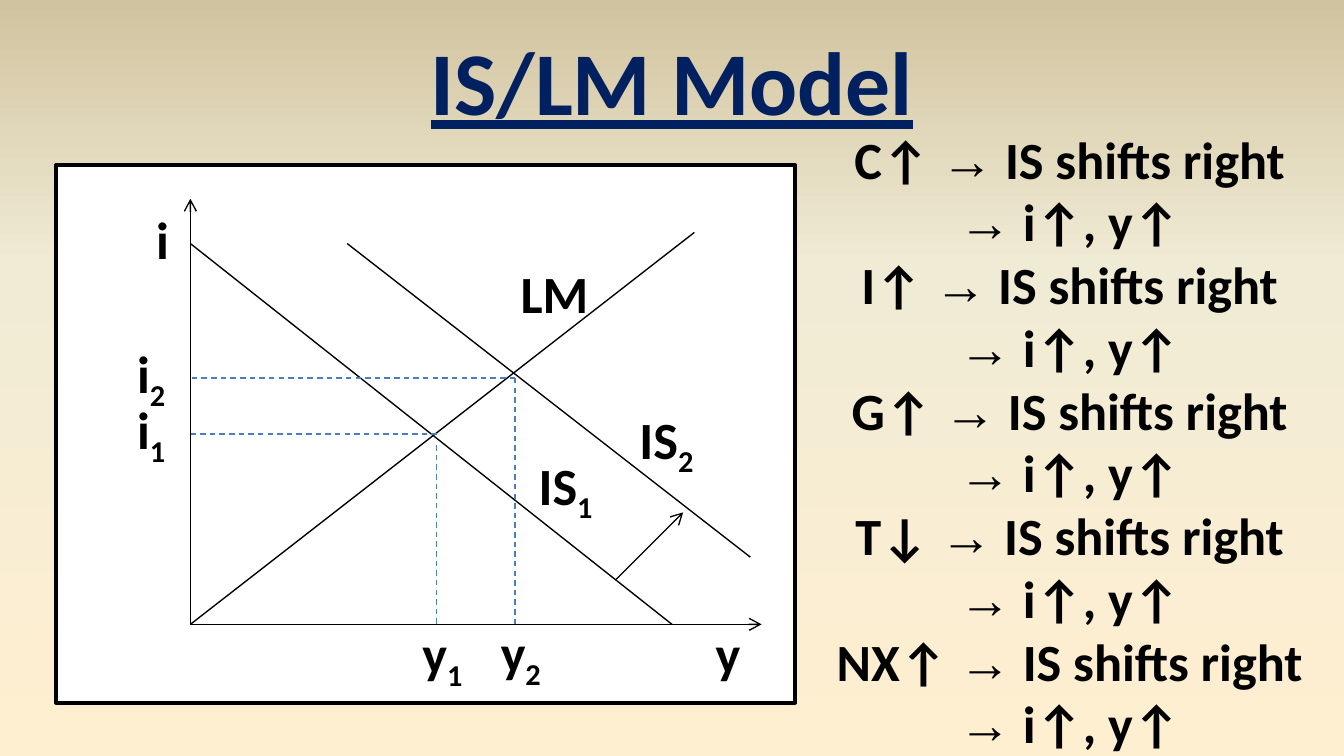
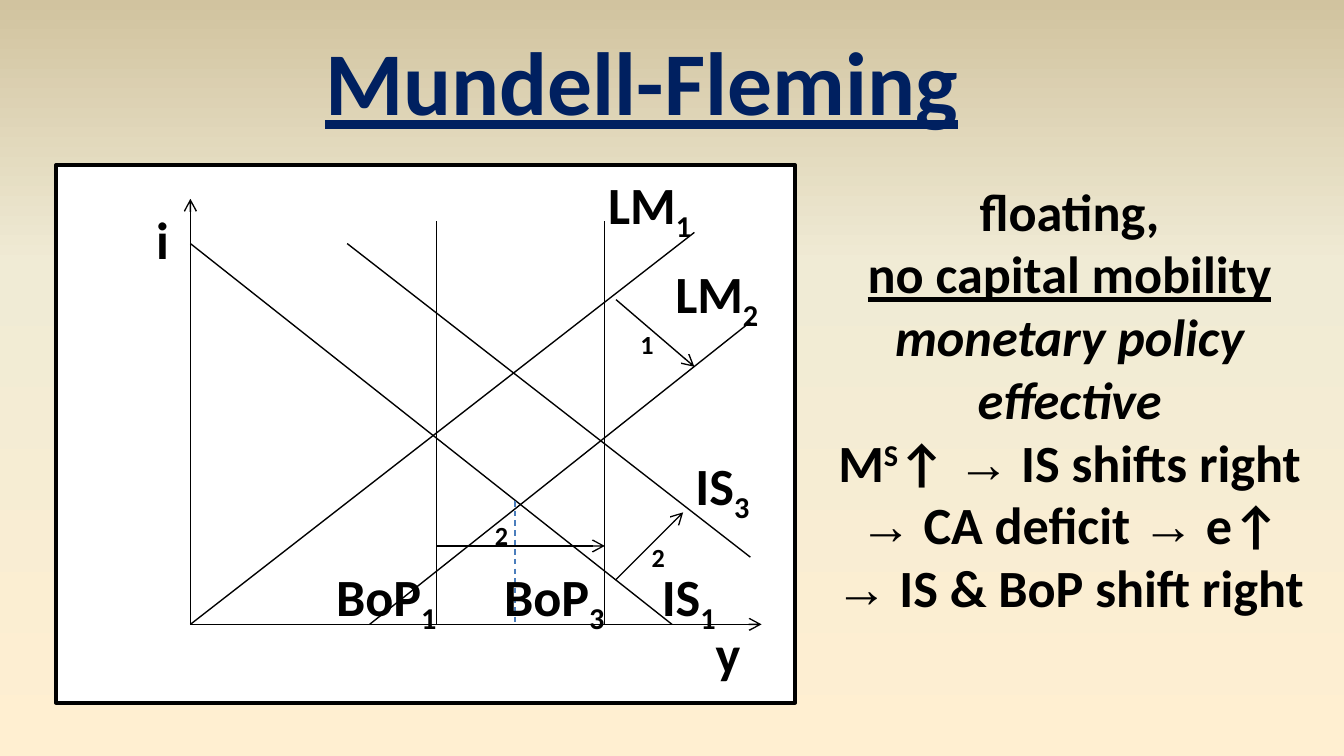
from copy import deepcopy
from dataclasses import dataclass
from itertools import groupby

from pptx import Presentation
from pptx.dml.color import RGBColor
from pptx.enum.dml import MSO_LINE
from pptx.enum.shapes import MSO_CONNECTOR, MSO_SHAPE
from pptx.enum.text import MSO_AUTO_SIZE, PP_ALIGN
from pptx.oxml.ns import qn
from pptx.oxml.xmlchemy import OxmlElement
from pptx.util import Emu, Pt

EMU_PER_PX = 9525
BLANK_LAYOUT = 6


def px(value):
    return Emu(value * EMU_PER_PX)


@dataclass(frozen=True)
class Theme:
    title_color: str = "002060"
    ink: str = "000000"
    paper: str = "FFFFFF"
    guide: str = "4B7EBC"
    background: tuple = ((0, "FFEFD1"), (0.65, "F0EBD5"), (1, "D1C39F"))
    font: str = "Calibri"
    arrow_font: str = "Times New Roman"
    title_size: int = 48
    text_size: int = 28
    step_size: int = 14
    border_width: float = 2
    line_width: float = 0.75


@dataclass(frozen=True)
class Span:
    text: str
    baseline: int = 0
    italic: bool = False
    underline: bool = False


class Deck:
    def __init__(self, theme):
        self.theme = theme
        self.presentation = Presentation()
        self.presentation.slide_width = px(960)
        self.presentation.slide_height = px(540)
        self.slide = None
        self.shapes = None

    def add_slide(self):
        layout = self.presentation.slide_layouts[BLANK_LAYOUT]
        self.slide = self.presentation.slides.add_slide(layout)
        self.shapes = self.slide.shapes
        fill = self.slide.background.fill
        fill.gradient()
        fill.gradient_angle = 90
        stop_list = self.slide.element.find(".//" + qn("a:gsLst"))
        stop_list.append(deepcopy(stop_list[0]))
        for stop, (position, color) in zip(fill.gradient_stops, self.theme.background):
            stop.position = position
            stop.color.rgb = RGBColor.from_string(color)

    def text(self, left, top, width, height, paragraphs, size=None, color=None, wrap=True):
        box = self.shapes.add_textbox(px(left), px(top), px(width), px(height))
        frame = box.text_frame
        frame.word_wrap = wrap
        frame.auto_size = MSO_AUTO_SIZE.SHAPE_TO_FIT_TEXT
        for index, spans in enumerate(paragraphs):
            paragraph = frame.add_paragraph() if index else frame.paragraphs[0]
            paragraph.alignment = PP_ALIGN.CENTER
            for span in spans:
                self.span(paragraph, span, size or self.theme.text_size, color or self.theme.ink)

    def span(self, paragraph, span, size, color):
        for is_arrow, characters in groupby(span.text, lambda character: character == "→"):
            run = paragraph.add_run()
            run.text = "".join(characters)
            font = run.font
            font.name = self.theme.arrow_font if is_arrow else self.theme.font
            font.size = Pt(size)
            font.bold = True
            font.italic = span.italic
            font.underline = span.underline
            font.color.rgb = RGBColor.from_string(color)
            if span.baseline:
                run.font._element.set("baseline", str(span.baseline * 1000))

    def title(self, left, width, text):
        self.text(left, 14, width, 87, [[Span(text, underline=True)]],
                  self.theme.title_size, self.theme.title_color, wrap=False)

    def side_text(self, top, height, paragraphs):
        self.text(568, top, 392, height, paragraphs)

    def label(self, left, top, width, text, subscript=""):
        spans = [Span(text)]
        if subscript:
            spans.append(Span(subscript, baseline=-25))
        self.text(left, top, width, 55, [spans])

    def step(self, left, top, number):
        self.text(left, top, 24, 33, [[Span(number)]], self.theme.step_size)

    def line(self, start, end, arrow=False, guide=False):
        connector = self.shapes.add_connector(
            MSO_CONNECTOR.STRAIGHT, *(px(value) for value in (*start, *end)))
        connector.line.width = Pt(self.theme.line_width)
        color = self.theme.guide if guide else self.theme.ink
        connector.line.color.rgb = RGBColor.from_string(color)
        if guide:
            connector.line.dash_style = MSO_LINE.DASH
        if arrow:
            tail = OxmlElement("a:tailEnd")
            tail.set("type", "arrow")
            connector.line._get_or_add_ln().append(tail)
        connector._element.spPr.append(OxmlElement("a:effectLst"))

    def diagram(self):
        self.shapes = self.slide.shapes.add_group_shape().shapes
        panel = self.shapes.add_shape(MSO_SHAPE.RECTANGLE, px(40), px(118), px(528), px(384))
        panel.shadow.inherit = False
        panel.fill.solid()
        panel.fill.fore_color.rgb = RGBColor.from_string(self.theme.paper)
        panel.line.color.rgb = RGBColor.from_string(self.theme.ink)
        panel.line.width = Pt(self.theme.border_width)
        origin = (136, 446)
        self.line((496, 166), origin)
        self.line((136, 174), (480, 446))
        self.line((248, 174), (536, 398))
        self.line(origin, (136, 142), arrow=True)
        self.line(origin, (544, 446), arrow=True)
        self.line((440, 414), (488, 366), arrow=True)
        self.label(80, 143, 72, "i")
        self.label(488, 439, 64, "y")


def add_is_lm(deck):
    deck.add_slide()
    deck.title(296, 368, "IS/LM Model")
    paragraphs = []
    for cause in ("C↑", "I↑", "G↑", "T↓", "NX↑"):
        paragraphs += [[Span(f"{cause} → IS shifts right")], [Span("→ i↑, y↑")]]
    deck.side_text(86, 462, paragraphs)

    deck.diagram()
    for start, end in (
        ((368, 270), (136, 270)),
        ((312, 310), (136, 310)),
        ((312, 318), (312, 446)),
        ((368, 270), (368, 446)),
    ):
        deck.line(start, end, guide=True)
    for label in (
        (368, 319, 72, "IS", "1"),
        (360, 182, 72, "LM"),
        (440, 286, 72, "IS", "2"),
        (80, 239, 56, "i", "2"),
        (80, 279, 56, "i", "1"),
        (288, 439, 56, "y", "1"),
        (344, 438, 56, "y", "2"),
    ):
        deck.label(*label)


def add_mundell_fleming(deck):
    deck.add_slide()
    deck.title(221, 475, "Mundell-Fleming")
    deck.side_text(123, 326, [
        [Span("floating,")],
        [Span("no capital mobility", underline=True)],
        [Span("monetary policy", italic=True)],
        [Span("effective", italic=True)],
        [Span("M"), Span("S", baseline=30), Span("↑ → IS shifts right")],
        [Span("→ CA deficit → e↑")],
        [Span("→ IS & BoP shift right")],
    ])

    deck.diagram()
    for bop in (312, 432):
        deck.line((bop, 158), (bop, 446))
    deck.line((536, 230), (264, 446))
    deck.line((440, 214), (496, 262), arrow=True)
    deck.line((312, 390), (432, 390), arrow=True)
    deck.line((368, 358), (368, 446), guide=True)
    for label in (
        (456, 398, 72, "IS", "1"),
        (480, 319, 72, "IS", "3"),
        (416, 118, 96, "LM", "1"),
        (464, 182, 96, "LM", "2"),
        (224, 398, 104, "BoP", "1"),
        (344, 398, 104, "BoP", "3"),
    ):
        deck.label(*label)
    for step in ((448, 230, "1"), (456, 382, "2"), (344, 366, "2")):
        deck.step(*step)


def main():
    deck = Deck(Theme())
    add_is_lm(deck)
    add_mundell_fleming(deck)
    deck.presentation.save("out.pptx")


if __name__ == "__main__":
    main()
